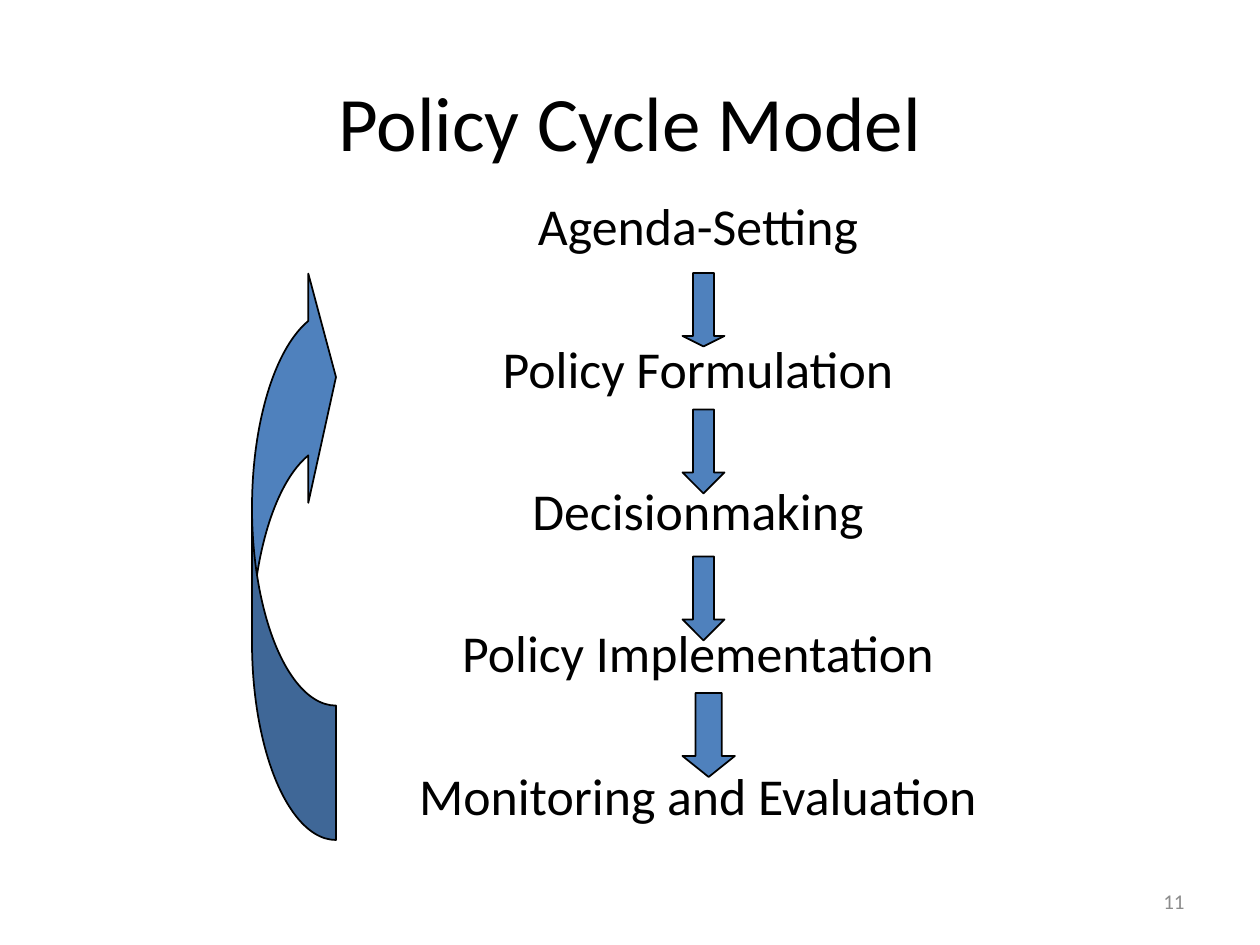
from pptx import Presentation
from pptx.dml.color import RGBColor
from pptx.enum.shapes import MSO_SHAPE
from pptx.enum.text import MSO_ANCHOR, PP_ALIGN
from pptx.util import Pt


def color(code):
    return RGBColor.from_string(code)


class Deck:
    font = "Calibri"
    ink = "000000"
    blue = "4F81BD"

    def __init__(self, slide):
        self.slide = slide

    def text(self, box, words, size, tint=ink, align=PP_ALIGN.CENTER,
             anchor=MSO_ANCHOR.MIDDLE):
        frame = self.slide.shapes.add_textbox(*map(Pt, box)).text_frame
        frame.word_wrap = True
        frame.vertical_anchor = anchor
        frame.text = words
        for para in frame.paragraphs:
            para.alignment = align
            for run in para.runs:
                run.font.name = self.font
                run.font.size = Pt(size)
                run.font.color.rgb = color(tint)
        return frame

    def steps(self, box, names, size, first, gap):
        frame = self.text(box, "\n".join(names), size, anchor=MSO_ANCHOR.TOP)
        for rank, para in enumerate(frame.paragraphs):
            para.line_spacing = 0.6
            para.space_before = Pt(gap if rank else first)

    def arrow(self, kind, box, ratios, turn=0):
        shape = self.slide.shapes.add_shape(kind, *map(Pt, box))
        shape.shadow.inherit = False
        shape.fill.solid()
        shape.fill.fore_color.rgb = color(self.blue)
        shape.line.color.rgb = color(self.ink)
        shape.line.width = Pt(1)
        shape.rotation = turn
        for rank, ratio in enumerate(ratios):
            shape.adjustments[rank] = ratio


def main():
    prs = Presentation()
    prs.slide_width, prs.slide_height = Pt(720), Pt(540)
    deck = Deck(prs.slides.add_slide(prs.slide_layouts[6]))

    deck.text((54, 24, 612, 90), "Policy Cycle Model", 44)
    deck.text((516, 500.5, 168, 28.8), "11", 12, "8C8C8C", PP_ALIGN.RIGHT)
    names = ["Agenda-Setting", "Policy Formulation", "Decisionmaking",
             "Policy Implementation", "Monitoring and Evaluation"]
    deck.steps((78, 120, 642, 390), names, 29.6, 5.9, 60)

    downs = [(156, 24, 42, 0.25), (234, 24, 48, 0.5),
             (318, 24, 48, 0.5), (396, 30, 48, 0.4)]
    for top, width, height, head in downs:
        deck.arrow(MSO_SHAPE.DOWN_ARROW, (390, top, width, height),
                   (0.5, head))
    deck.arrow(MSO_SHAPE.CURVED_LEFT_ARROW, (144, 150, 48, 330),
               (1.6, 2.73, 0.33), 180)

    prs.save("out.pptx")


if __name__ == "__main__":
    main()
